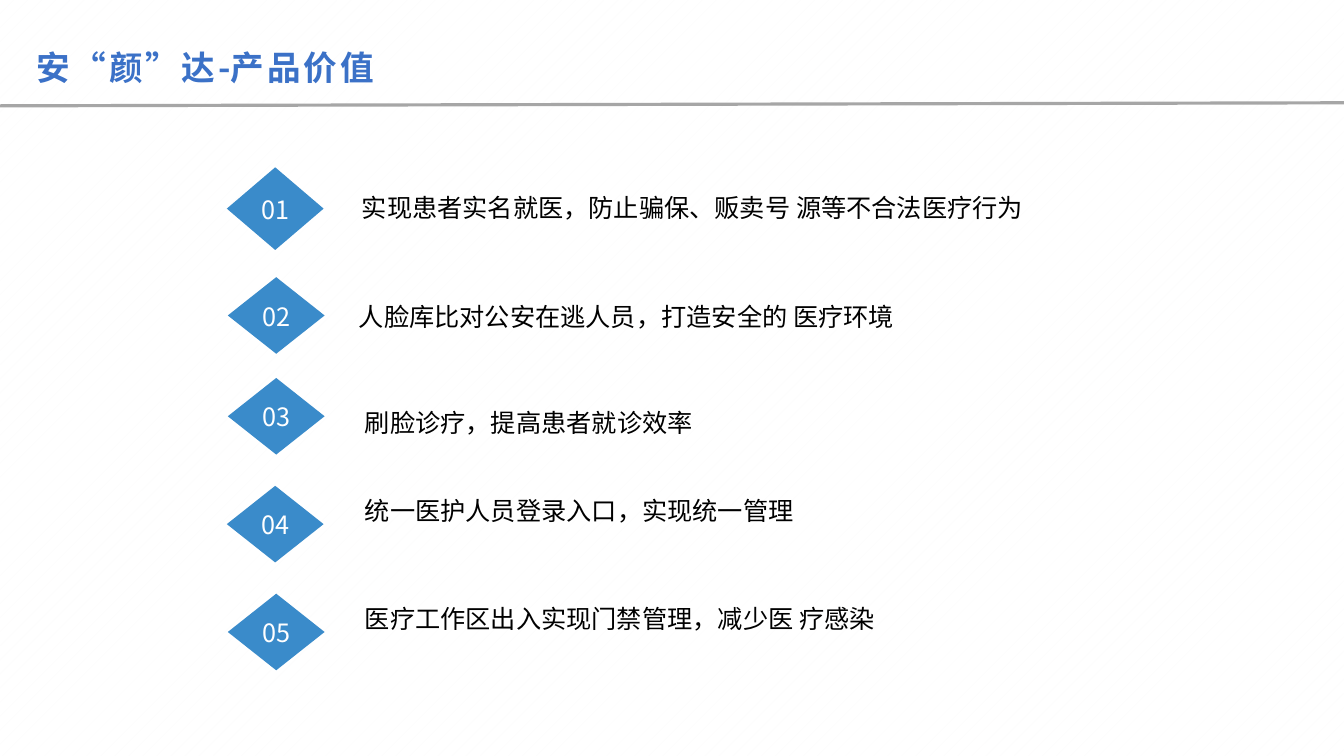
from dataclasses import dataclass

from pptx import Presentation
from pptx.dml.color import RGBColor
from pptx.enum.dml import MSO_PATTERN
from pptx.enum.shapes import MSO_CONNECTOR, MSO_SHAPE
from pptx.enum.text import MSO_ANCHOR, PP_ALIGN
from pptx.oxml.ns import qn
from pptx.util import Inches, Pt

DIAMOND = MSO_SHAPE.DIAMOND
STRAIGHT = MSO_CONNECTOR.STRAIGHT
MIDDLE, TOP = MSO_ANCHOR.MIDDLE, MSO_ANCHOR.TOP
LEFT, CENTER = PP_ALIGN.LEFT, PP_ALIGN.CENTER
FAINT_DOTS = MSO_PATTERN.PERCENT_5


@dataclass(frozen=True)
class Theme:
    title: str = "3B71C7"
    rule: str = "A6A6A6"
    diamond: str = "3A8BCA"
    number: str = "FFFFFF"
    body: str = "000000"
    paper: str = "FFFFFF"
    paper_dots: str = "FCFBFB"
    latin: str = "Arial"
    chinese: str = "Noto Sans CJK SC"
    title_size: float = 24
    body_size: float = 18
    rule_width: float = 2.28


THEME = Theme()
WIDTH, HEIGHT = 13.33, 7.5

# text, typeface, letter spacing in points
TITLE = [
    ("安“颜”达", THEME.latin, 2),
    ("-", THEME.chinese, -0.1),
    ("产品价值", THEME.latin, 2),
]

# text, diamond (left, top, height), text box (left, top, width)
VALUES = [
    ("实现患者实名就医，防止骗保、贩卖号 源等不合法医疗行为", (2.25, 1.66, 0.82), (3.58, 1.9, 7.16)),
    ("人脸库比对公安在逃人员，打造安全的 医疗环境", (2.26, 2.75, 0.76), (3.55, 2.98, 6.81)),
    ("刷脸诊疗，提高患者就诊效率", (2.26, 3.75, 0.76), (3.61, 4.03, 3.28)),
    ("统一医护人员登录入口，实现统一管理", (2.25, 4.82, 0.76), (3.61, 4.9, 4.28)),
    ("医疗工作区出入实现门禁管理，减少医 疗感染", (2.26, 5.89, 0.76), (3.61, 5.98, 6.16)),
]
DIAMOND_WIDTH = 0.96
LINE_HEIGHT = 0.33


def color(value):
    return RGBColor.from_string(value)


def write(shape, spans, *, size, fill, bold=False, align=LEFT, anchor=TOP, wrap=True):
    """Fill a shape with one paragraph of (text, typeface, spacing) spans."""
    frame = shape.text_frame
    frame.word_wrap = wrap
    frame.vertical_anchor = anchor
    frame.margin_right = frame.margin_bottom = 0
    frame.margin_left = frame.margin_top = Inches(0.01)
    para = frame.paragraphs[0]
    para.alignment = align
    for text, typeface, spacing in spans:
        span = para.add_run()
        span.text = text
        span.font.name = typeface
        span.font.size = Pt(size)
        span.font.bold = bold
        span.font.color.rgb = color(fill)
        properties = span.font._element
        properties.set("spc", str(round(spacing * 100)))
        east_asian = properties.makeelement(qn("a:ea"), {"typeface": THEME.chinese})
        properties.find(qn("a:latin")).addnext(east_asian)


def add_text(page, spans, left, top, width, height, **style):
    box = page.shapes.add_textbox(*map(Inches, (left, top, width, height)))
    write(box, spans, **style)


def add_rule(page):
    ends = map(Inches, (0, 1.05, WIDTH, 1.02))
    rule = page.shapes.add_connector(STRAIGHT, *ends)
    rule.line.color.rgb = color(THEME.rule)
    rule.line.width = Pt(THEME.rule_width)
    properties = rule._element.spPr
    properties.append(properties.makeelement(qn("a:effectLst"), {}))


def add_diamond(page, number, left, top, height):
    diamond = page.shapes.add_shape(
        DIAMOND, *map(Inches, (left, top, DIAMOND_WIDTH, height)))
    diamond.shadow.inherit = False
    diamond.fill.solid()
    diamond.fill.fore_color.rgb = color(THEME.diamond)
    diamond.line.fill.background()
    write(diamond, [(f"{number:02}", THEME.chinese, -0.1)], size=THEME.body_size,
          fill=THEME.number, align=CENTER, anchor=MIDDLE, wrap=False)


def paint_background(page):
    fill = page.background.fill
    fill.patterned()
    fill.pattern = FAINT_DOTS
    fill.fore_color.rgb = color(THEME.paper_dots)
    fill.back_color.rgb = color(THEME.paper)


def main():
    deck = Presentation()
    deck.slide_width, deck.slide_height = Inches(WIDTH), Inches(HEIGHT)
    page = deck.slides.add_slide(deck.slide_layouts[6])
    paint_background(page)
    add_text(page, TITLE, 0.35, 0.45, 3.99, 0.43, size=THEME.title_size,
             fill=THEME.title, bold=True, anchor=MIDDLE)
    add_rule(page)
    for number, (text, diamond, (left, top, width)) in enumerate(VALUES, 1):
        add_diamond(page, number, *diamond)
        add_text(page, [(text, THEME.chinese, 0)], left, top, width, LINE_HEIGHT,
                 size=THEME.body_size, fill=THEME.body)
    deck.save("out.pptx")


if __name__ == "__main__":
    main()
